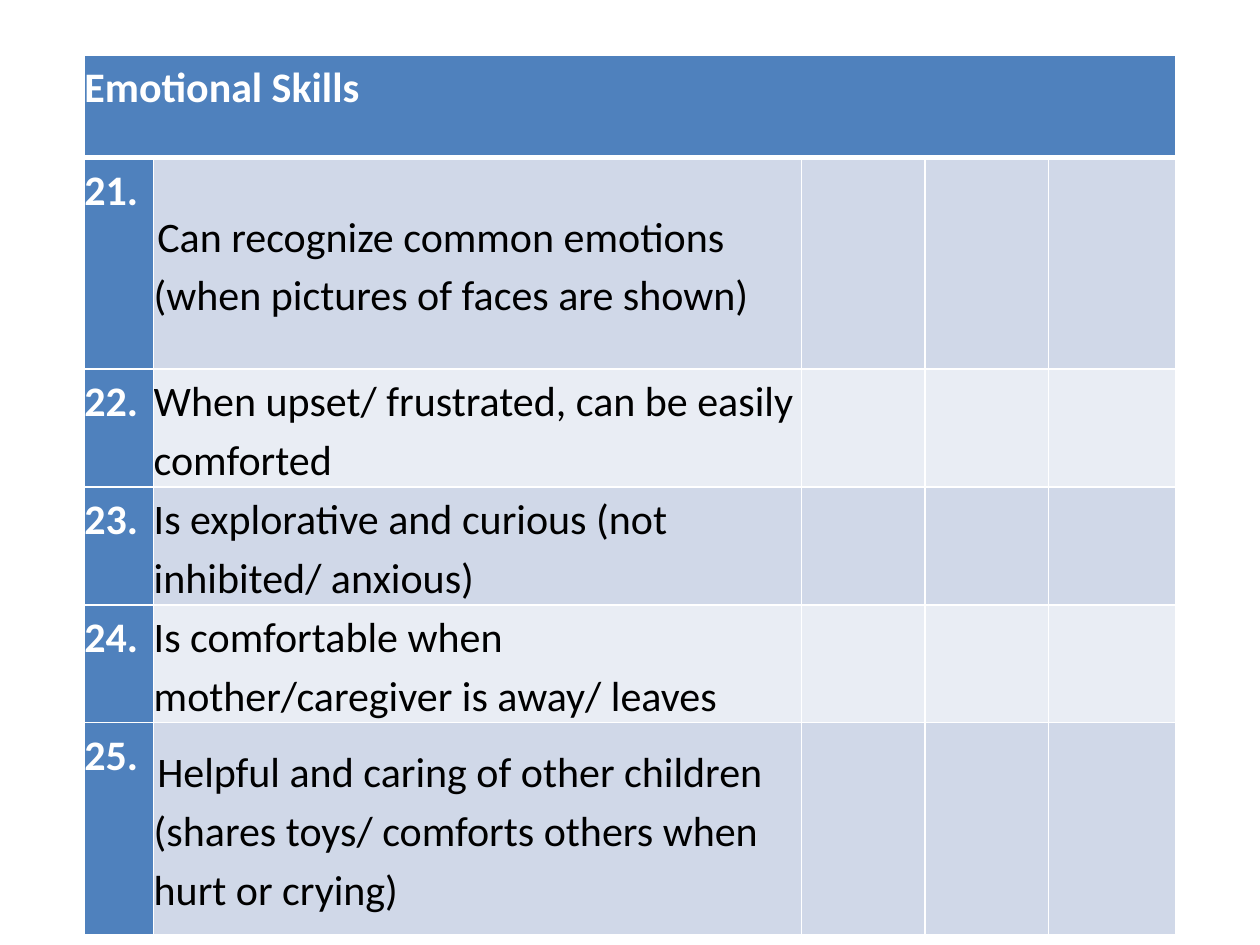
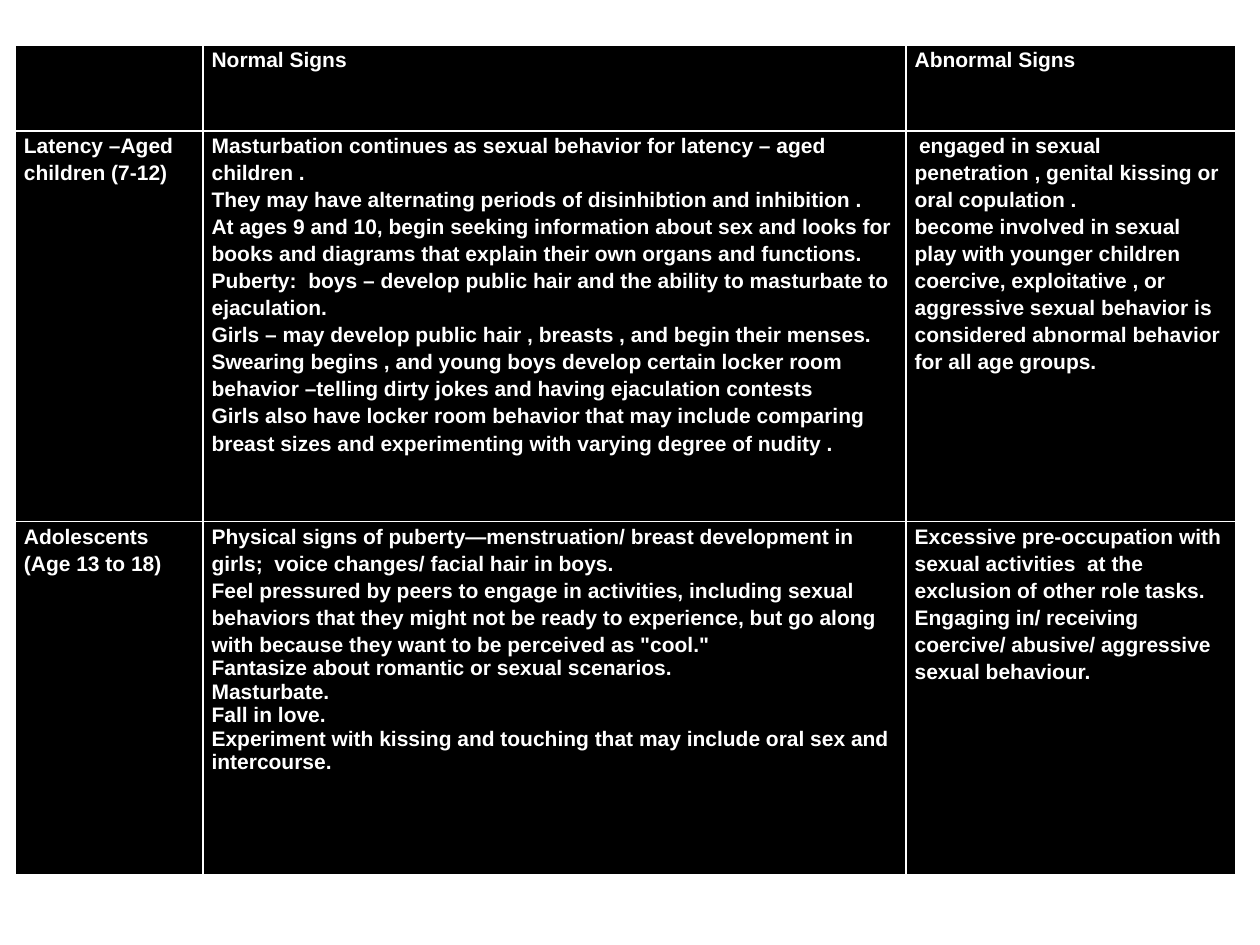
from lxml import etree
from pptx import Presentation
from pptx.dml.color import RGBColor
from pptx.enum.text import MSO_ANCHOR
from pptx.oxml.ns import qn
from pptx.util import Inches, Pt

TOP, MIDDLE = MSO_ANCHOR.TOP, MSO_ANCHOR.MIDDLE
COLORS = {"white": "FFFFFF", "black": "000000", "blue": "4F81BD",
          "band_dark": "D0D8E8", "band_light": "E9EDF4"}
LOOSE, SINGLE = 1.15, 1.0
RULE, HEADER_RULE = 1, 3
LEAD_SPACE_SIZE = 9

# Content: emotional skills checklist
SKILLS_TITLE = "Emotional Skills"
FIRST_SKILL = 21
SKILLS = [
    " Can recognize common emotions (when pictures of faces are shown)",
    "When upset/ frustrated, can be easily comforted",
    "Is explorative and curious (not inhibited/ anxious)",
    "Is comfortable when mother/caregiver is away/ leaves",
    " Helpful and caring of other children (shares toys/ comforts others when hurt or crying)",
]
SKILL_GRID = {"left": 0.67, "top": 0.44, "cols": [0.55, 5.14, 0.98, 0.98, 1.01],
              "rows": [0.81, 1.68, 0.81, 0.81, 0.81, 1.68]}

# Content: signs by age group, each cell a list of paragraphs
SIGNS = [
    [[], ["Normal Signs"], ["Abnormal Signs"]],
    [
        ["Latency –Aged children (7-12)"],
        ["Masturbation continues as sexual behavior for latency – aged children .",
         "They may have alternating periods of disinhibtion and inhibition .",
         "At ages 9 and 10, begin seeking information about sex and looks for books and "
         "diagrams that explain their own organs and functions.",
         "Puberty:  boys – develop public hair and the ability to masturbate to ejaculation.",
         "Girls – may develop public hair , breasts , and begin their menses.",
         "Swearing begins , and young boys develop certain locker room behavior –telling "
         "dirty jokes and having ejaculation contests",
         "Girls also have locker room behavior that may include comparing breast sizes and "
         "experimenting with varying degree of nudity ."],
        [" engaged in sexual penetration , genital kissing or oral copulation .",
         "become involved in sexual play with younger children",
         "coercive, exploitative , or aggressive sexual behavior is considered abnormal "
         "behavior for all age groups."],
    ],
    [
        ["Adolescents", "(Age 13 to 18)"],
        ["Physical signs of puberty—menstruation/ breast development in girls;  voice "
         "changes/ facial hair in boys.",
         "Feel pressured by peers to engage in activities, including sexual behaviors that "
         "they might not be ready to experience, but go along with because they want to be "
         'perceived as "cool."',
         "Fantasize about romantic or sexual scenarios.",
         "Masturbate.",
         "Fall in love.",
         "Experiment with kissing and touching that may include oral sex and intercourse."],
        ["Excessive pre-occupation with sexual activities  at the exclusion of other role tasks.",
         "Engaging in/ receiving coercive/ abusive/ aggressive sexual behaviour."],
    ],
]
SINGLE_SPACED = SIGNS[2][1][2:]
SIGN_GRID = {"left": 0.12, "top": 0.36, "cols": [1.49, 5.58, 2.62], "rows": [0.68, 3.1, 2.8]}

# Text formats
SKILL_HEAD = {"name": "Calibri", "size": Pt(24), "bold": True, "color": "white"}
SKILL_BODY = {**SKILL_HEAD, "bold": False, "color": "black"}
SIGN_TEXT = {"name": "Arial", "size": Pt(12), "bold": True, "color": "white"}


def rgb(name):
    return RGBColor.from_string(COLORS[name])


def add_grid(slide, grid):
    cols, rows = grid["cols"], grid["rows"]
    table = slide.shapes.add_table(
        len(rows), len(cols), Inches(grid["left"]), Inches(grid["top"]),
        Inches(sum(cols)), Inches(sum(rows))).table
    table.first_row = table.horz_banding = False
    for column, width in zip(table.columns, cols):
        column.width = Inches(width)
    for row, height in zip(table.rows, rows):
        row.height = Inches(height)
    return table


def add_borders(cell, **widths):
    props = cell._tc.get_or_add_tcPr()
    for side in "LRTB":
        line = etree.SubElement(props, qn(f"a:ln{side}"),
                                w=str(Pt(widths.get(side, RULE))))
        fill = etree.SubElement(line, qn("a:solidFill"))
        etree.SubElement(fill, qn("a:srgbClr"), val=COLORS["white"])


def add_run(paragraph, text, style):
    run = paragraph.add_run()
    run.text = text
    for key, value in style.items():
        if key == "color":
            run.font.color.rgb = rgb(value)
        else:
            setattr(run.font, key, value)


def fill_cell(cell, paragraphs, style, background, side_inset=0, anchor=TOP, **borders):
    add_borders(cell, **borders)
    cell.fill.solid()
    cell.fill.fore_color.rgb = rgb(background)
    if not paragraphs:
        return
    layout = {"margin_left": Inches(side_inset), "margin_right": Inches(side_inset),
              "margin_top": 0, "margin_bottom": 0, "vertical_anchor": anchor}
    for key, value in layout.items():
        setattr(cell, key, value)
    frame = cell.text_frame
    for index, text in enumerate(paragraphs):
        paragraph = frame.add_paragraph() if index else frame.paragraphs[0]
        paragraph.line_spacing = SINGLE if text in SINGLE_SPACED else LOOSE
        if text.startswith(" "):
            add_run(paragraph, " ", {**style, "size": Pt(LEAD_SPACE_SIZE)})
            text = text[1:]
        add_run(paragraph, text, style)


def build_skills(slide):
    table = add_grid(slide, SKILL_GRID)
    last = len(SKILL_GRID["cols"]) - 1
    table.cell(0, 0).merge(table.cell(0, last))
    for col in range(last + 1):
        title = [] if col else [SKILLS_TITLE]
        fill_cell(table.cell(0, col), title, SKILL_HEAD, "blue", B=HEADER_RULE)
    for row, skill in enumerate(SKILLS, 1):
        rule = HEADER_RULE if row == 1 else RULE
        band = "band_dark" if row % 2 else "band_light"
        number = f"{FIRST_SKILL + row - 1}."
        fill_cell(table.cell(row, 0), [number], SKILL_HEAD, "blue", T=rule)
        fill_cell(table.cell(row, 1), [skill], SKILL_BODY, band, anchor=MIDDLE, T=rule)
        for col in range(2, last + 1):
            fill_cell(table.cell(row, col), [], SKILL_BODY, band, T=rule)


def build_signs(slide):
    table = add_grid(slide, SIGN_GRID)
    for row, groups in enumerate(SIGNS):
        for col, signs in enumerate(groups):
            fill_cell(table.cell(row, col), signs, SIGN_TEXT, "black", side_inset=0.07)


def main():
    deck = Presentation()
    deck.slide_width, deck.slide_height = Inches(10), Inches(7.5)
    blank = deck.slide_layouts[6]
    for build in (build_skills, build_signs):
        build(deck.slides.add_slide(blank))
    deck.save("out.pptx")


if __name__ == "__main__":
    main()
